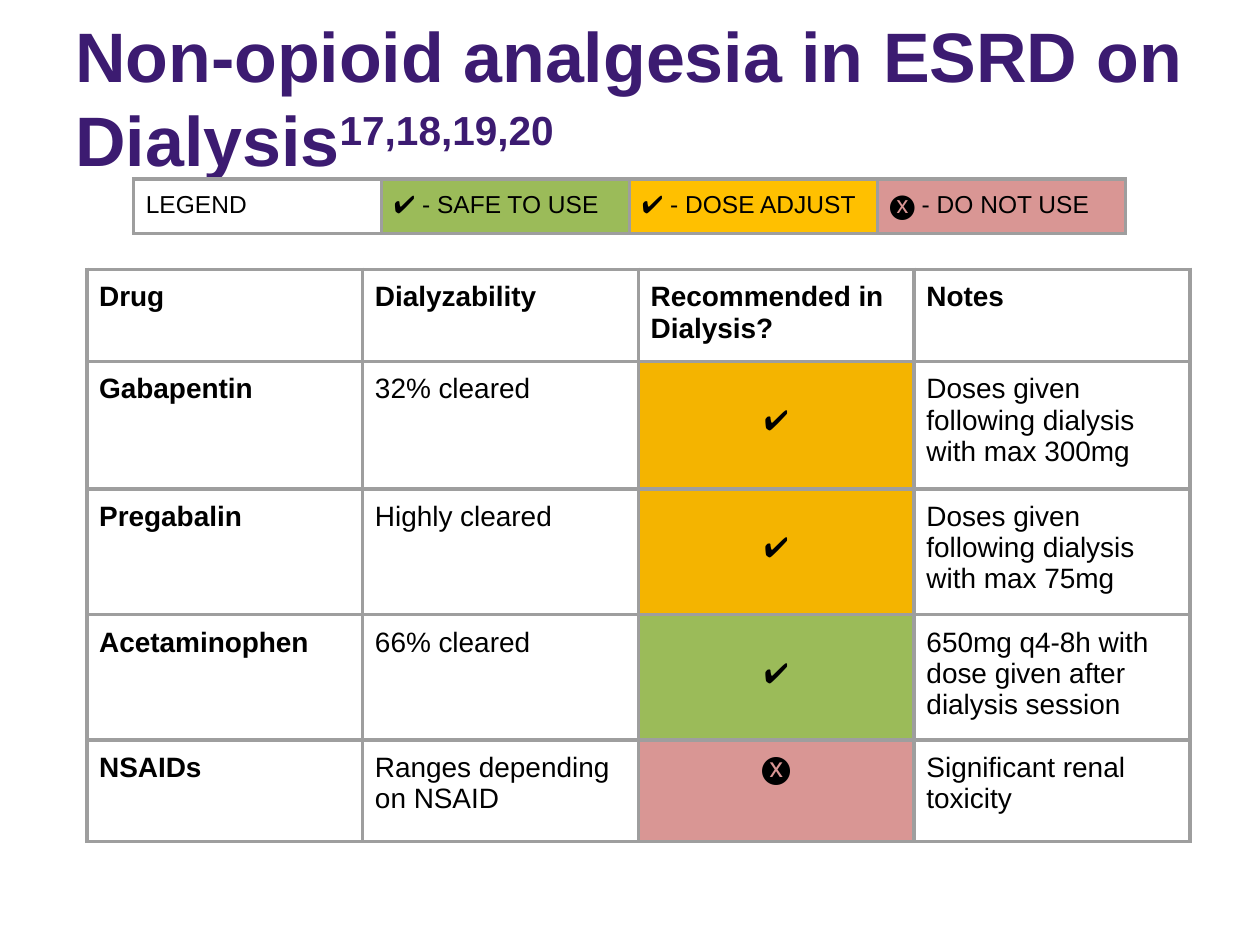
from lxml import etree
from pptx import Presentation
from pptx.dml.color import RGBColor
from pptx.enum.text import MSO_ANCHOR, PP_ALIGN
from pptx.oxml.ns import qn
from pptx.util import Cm, Pt

TOP = MSO_ANCHOR.TOP
LEFT, MID = PP_ALIGN.LEFT, PP_ALIGN.CENTER
FONT = "Arial"
PURPLE, BLACK, GREY = "3C1B71", "000000", "9E9E9E"
GREEN, AMBER, GOLD, RED = "9BBB59", "F4B400", "FFC000", "D99694"
PAD = 0.25
DROP = 0.88  # top inset that sets a tick one line lower

HEADS = ["Drug", "Dialyzability", "Recommended in Dialysis?", "Notes"]
DRUGS = [
    ["Gabapentin", "32% cleared", "✔",
     "Doses given following dialysis with max 300mg"],
    ["Pregabalin", "Highly cleared", "✔",
     "Doses given following dialysis with max 75mg"],
    ["Acetaminophen", "66% cleared", "✔",
     "650mg q4-8h with dose given after dialysis session"],
    ["NSAIDs", "Ranges depending on NSAID", "🅧",
     "Significant renal toxicity"],
]
MARKS = [AMBER, AMBER, GREEN, RED]
LEGEND = [("LEGEND", None), ("✔ - SAFE TO USE", GREEN),
          ("✔ - DOSE ADJUST", GOLD), ("🅧 - DO NOT USE", RED)]


def color(code):
    return RGBColor.from_string(code)


def write(para, text, size=16, bold=False, tint=BLACK, align=LEFT, rise=0):
    """Add a run to a paragraph; rise is a superscript shift in percent."""
    para.alignment = align
    run = para.add_run()
    run.text = text
    font = run.font
    font.name, font.size, font.bold = FONT, Pt(size), bold
    font.color.rgb = color(tint)
    if rise:
        run._r.get_or_add_rPr().set("baseline", str(rise * 1000))


def border(cell, tint=GREY, width=2.25):
    props = cell._tc.get_or_add_tcPr()
    for side in ("a:lnL", "a:lnR", "a:lnT", "a:lnB"):
        line = etree.SubElement(props, qn(side), w=str(Pt(width)))
        fill = etree.SubElement(line, qn("a:solidFill"))
        etree.SubElement(fill, qn("a:srgbClr"), val=tint)


def put_cell(cell, text, fill=None, top=PAD, **style):
    border(cell)
    if fill:
        cell.fill.solid()
        cell.fill.fore_color.rgb = color(fill)
    else:
        cell.fill.background()
    cell.margin_left = cell.margin_right = cell.margin_bottom = Cm(PAD)
    cell.margin_top = Cm(top)
    cell.vertical_anchor = TOP
    write(cell.text_frame.paragraphs[0], text, **style)


def add_grid(slide, left, top, wide, highs):
    """Add a plain table of four equal columns."""
    frame = slide.shapes.add_table(len(highs), 4, Cm(left), Cm(top),
                                   Cm(4 * wide), Cm(sum(highs)))
    table = frame.table
    table.first_row = table.horz_banding = False
    for col in table.columns:
        col.width = Cm(wide)
    for row, high in zip(table.rows, highs):
        row.height = Cm(high)
    return table


def add_title(slide):
    box = slide.shapes.add_textbox(Cm(1.27), Cm(0.13), Cm(22.86), Cm(3.6))
    frame = box.text_frame
    frame.word_wrap = True
    frame.vertical_anchor = TOP
    para = frame.paragraphs[0]
    para.line_spacing = Pt(48)
    style = {"size": 40, "bold": True, "tint": PURPLE}
    write(para, "Non-opioid analgesia in ESRD on Dialysis", **style)
    write(para, "17,18,19,20", rise=30, **style)


def add_drugs(slide):
    table = add_grid(slide, 1.75, 5.43, 5.56, [1.81, 2.57, 2.47, 2.46, 2.05])
    for col, head in enumerate(HEADS):
        put_cell(table.cell(0, col), head, bold=True)
    for row, (drug, mark) in enumerate(zip(DRUGS, MARKS), 1):
        name, clear, sign, note = drug
        put_cell(table.cell(row, 0), name, bold=True)
        put_cell(table.cell(row, 1), clear)
        put_cell(table.cell(row, 2), sign, fill=mark, align=MID,
                 top=DROP if sign == "✔" else PAD)
        put_cell(table.cell(row, 3), note)


def add_legend(slide):
    table = add_grid(slide, 2.69, 3.61, 5.0, [1.09])
    for col, (text, fill) in enumerate(LEGEND):
        put_cell(table.cell(0, col), text, fill=fill, size=14)


def main():
    deck = Presentation()
    deck.slide_width, deck.slide_height = Cm(25.4), Cm(19.05)
    slide = deck.slides.add_slide(deck.slide_layouts[6])
    add_title(slide)
    add_drugs(slide)
    add_legend(slide)
    deck.save("out.pptx")


if __name__ == "__main__":
    main()
